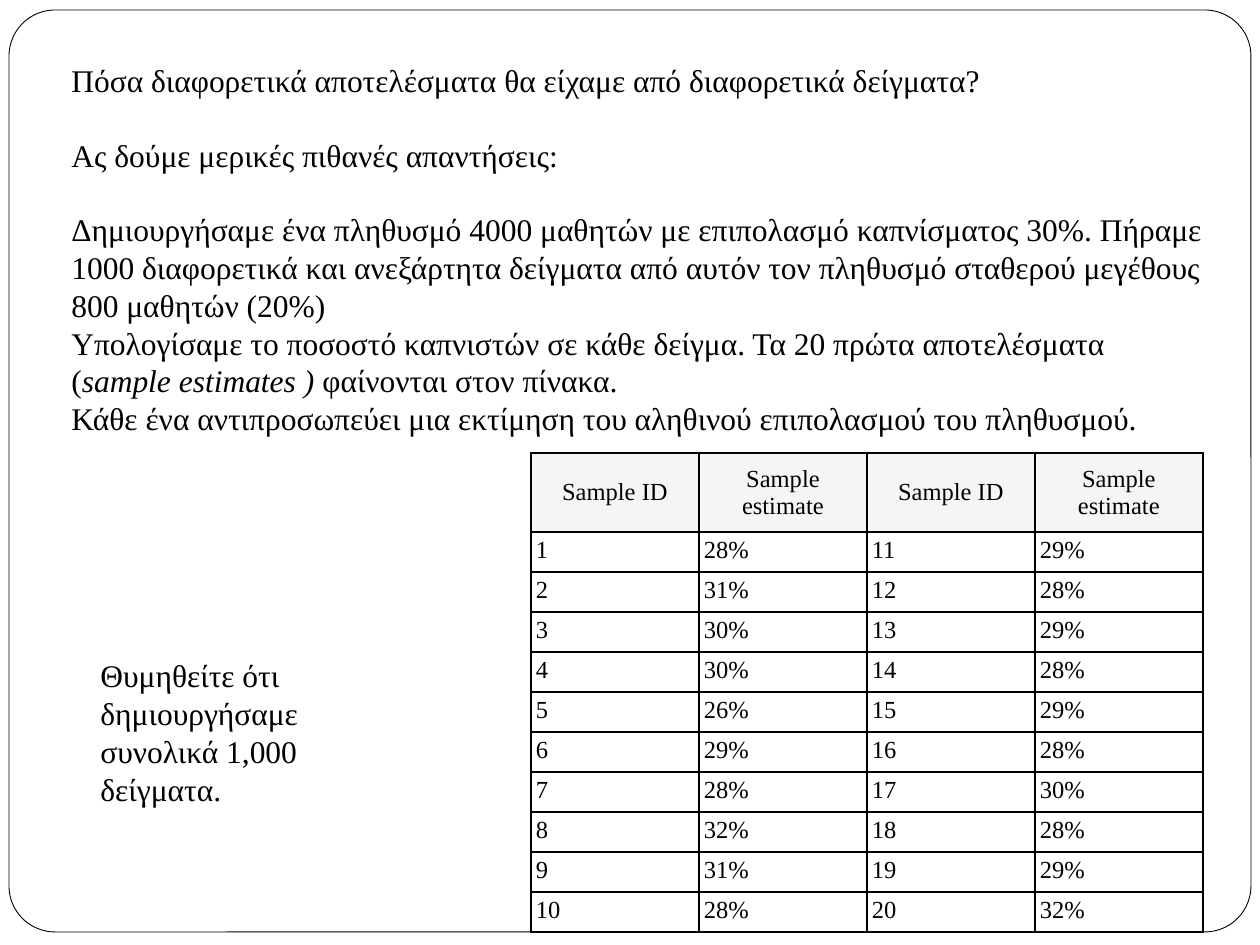
from pptx import Presentation
from pptx.dml.color import RGBColor
from pptx.enum.shapes import MSO_SHAPE as Shape
from pptx.enum.text import MSO_ANCHOR as Anchor, PP_ALIGN as Align
from pptx.oxml import parse_xml
from pptx.oxml.ns import nsdecls
from pptx.util import Emu, Pt

BLACK = RGBColor(0x00, 0x00, 0x00)
WHITE = RGBColor(0xFF, 0xFF, 0xFF)
HEADER_GREY = RGBColor(0xF5, 0xF5, 0xF5)
FONT = "Times New Roman"
BODY_SIZE, TABLE_SIZE, BLANK_LINE = 18, 14, 21
EMU_PER_PX = 914400 // 126

EXPLANATION = [
    ([("Πόσα διαφορετικά αποτελέσματα θα είχαμε από διαφορετικά δείγματα?", False)], BLANK_LINE),
    ([("Ας δούμε μερικές πιθανές απαντήσεις:", False)], BLANK_LINE),
    ([("Δημιουργήσαμε ένα πληθυσμό 4000 μαθητών με επιπολασμό καπνίσματος 30%. "
       "Πήραμε 1000 διαφορετικά και ανεξάρτητα δείγματα από αυτόν τον πληθυσμό "
       "σταθερού μεγέθους 800 μαθητών (20%)", False)], 0),
    ([("Υπολογίσαμε το ποσοστό καπνιστών σε κάθε δείγμα. Τα 20 πρώτα αποτελέσματα (", False),
      ("sample estimates ) ", True),
      ("φαίνονται στον πίνακα.", False)], 0),
    ([("Κάθε ένα αντιπροσωπεύει μια εκτίμηση του αληθινού επιπολασμού του πληθυσμού.", False)], 0),
]
REMINDER = [([("Θυμηθείτε ότι δημιουργήσαμε συνολικά 1,000 δείγματα.", False)], 0)]
ESTIMATES = [28, 31, 30, 30, 26, 29, 28, 32, 31, 28,
             29, 28, 29, 28, 29, 28, 30, 28, 29, 32]


def px(length):
    """Turn whole pixels into EMU."""
    return Emu(length * EMU_PER_PX)


class SlideBuilder:
    """Holds the text style and the current slide."""

    def __init__(self, slide):
        self.slide = slide

    def add_span(self, para, text, size, italic=False):
        span = para.add_run()
        span.text = text
        span.font.name = FONT
        span.font.size = Pt(size)
        span.font.italic = italic
        span.font.color.rgb = BLACK

    def add_frame(self, left, top, width, height):
        frame = self.slide.shapes.add_shape(
            Shape.ROUNDED_RECTANGLE, px(left), px(top), px(width), px(height))
        frame.adjustments[0] = 0.05
        frame.shadow.inherit = False
        frame.fill.solid()
        frame.fill.fore_color.rgb = WHITE
        frame.line.color.rgb = BLACK
        frame.line.width = Pt(0.5)

    def add_text(self, left, top, width, height, paragraphs):
        box = self.slide.shapes.add_textbox(px(left), px(top), px(width), px(height))
        body = box.text_frame
        body.word_wrap = True
        for index, (spans, gap) in enumerate(paragraphs):
            para = body.add_paragraph() if index else body.paragraphs[0]
            para.space_after = Pt(gap)
            for text, italic in spans:
                self.add_span(para, text, BODY_SIZE, italic)

    def fill_cell(self, cell, text, is_header):
        margin = px(10 if is_header else 5)
        cell.margin_left = cell.margin_right = margin
        cell.margin_top = cell.margin_bottom = margin
        cell.vertical_anchor = Anchor.MIDDLE if is_header else Anchor.TOP
        para = cell.text_frame.paragraphs[0]
        para.alignment = Align.CENTER if is_header else Align.LEFT
        self.add_span(para, text, TABLE_SIZE)
        properties = cell._tc.get_or_add_tcPr()
        for side in ("lnL", "lnR", "lnT", "lnB"):
            properties.append(parse_xml(
                f'<a:{side} {nsdecls("a")} w="{Pt(1)}"><a:solidFill>'
                f'<a:srgbClr val="{BLACK}"/></a:solidFill></a:{side}>'))
        cell.fill.solid()
        cell.fill.fore_color.rgb = HEADER_GREY if is_header else WHITE

    def add_table(self, left, top, column_width, header_height, row_height, rows):
        columns = len(rows[0])
        height = header_height + row_height * (len(rows) - 1)
        table = self.slide.shapes.add_table(
            len(rows), columns, px(left), px(top), px(column_width * columns), px(height)).table
        for column in table.columns:
            column.width = px(column_width)
        for row_index, values in enumerate(rows):
            is_header = row_index == 0
            table.rows[row_index].height = px(header_height if is_header else row_height)
            for column_index, text in enumerate(values):
                self.fill_cell(table.cell(row_index, column_index), text, is_header)


def main():
    deck = Presentation()
    deck.slide_width, deck.slide_height = px(1260), px(945)
    page = SlideBuilder(deck.slides.add_slide(deck.slide_layouts[6]))

    half = len(ESTIMATES) // 2
    rows = [["Sample ID", "Sample estimate"] * 2]
    for first in range(half):
        rows.append([text for sample in (first, first + half)
                     for text in (str(sample + 1), f"{ESTIMATES[sample]}%")])

    page.add_frame(9, 10, 1242, 922)
    page.add_text(59, 55, 1162, 432, EXPLANATION)
    page.add_table(531, 453, 168, 79, 40, rows)
    page.add_text(88, 650, 335, 165, REMINDER)
    deck.save("out.pptx")


if __name__ == "__main__":
    main()
